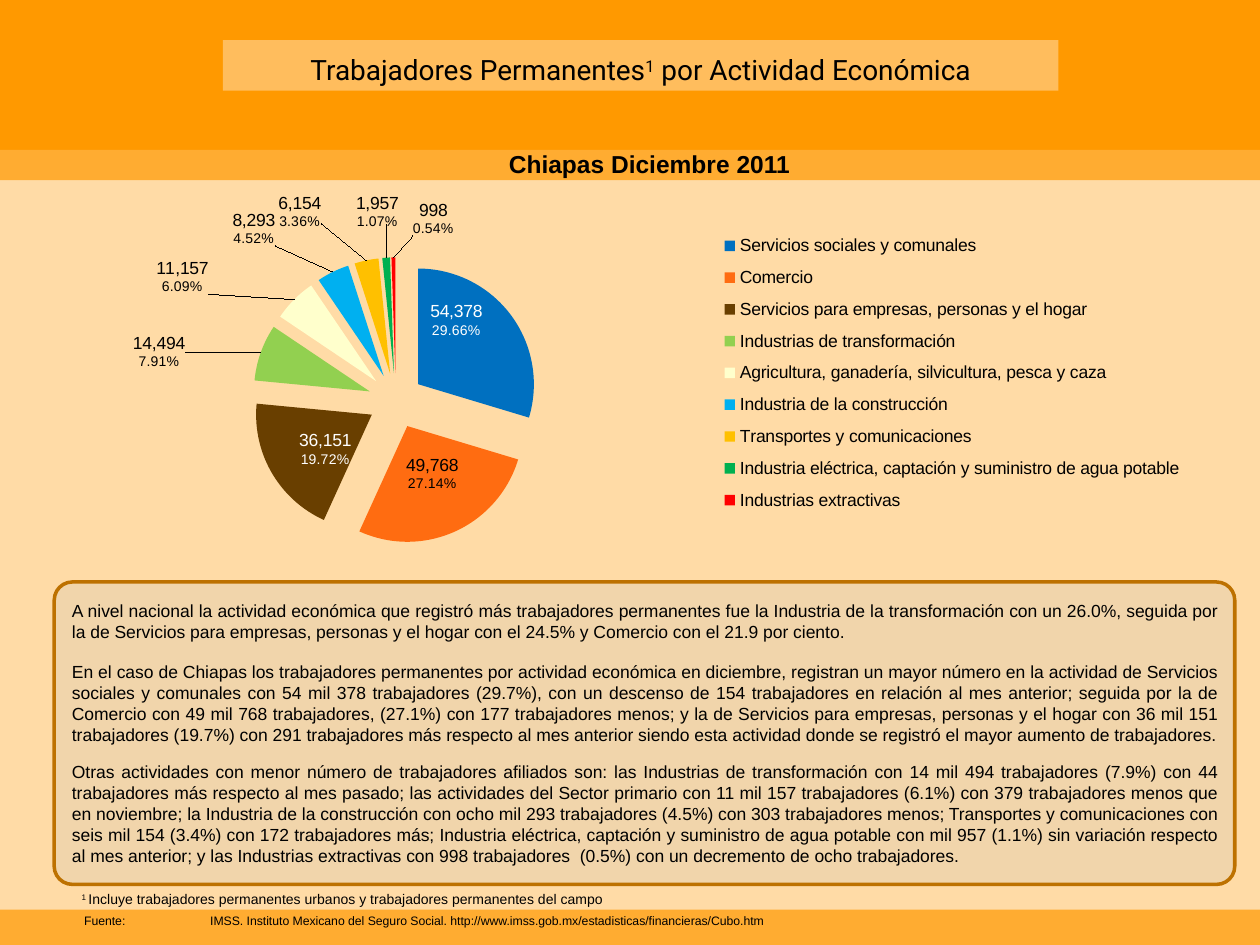
from lxml.etree import SubElement
from pptx import Presentation
from pptx.chart.data import CategoryChartData
from pptx.dml.color import RGBColor
from pptx.enum.chart import XL_CHART_TYPE, XL_LABEL_POSITION, XL_LEGEND_POSITION
from pptx.enum.shapes import MSO_SHAPE
from pptx.enum.text import MSO_ANCHOR, PP_ALIGN
from pptx.oxml import parse_xml
from pptx.oxml.ns import nsdecls, qn
from pptx.util import Pt

BLACK = RGBColor(0, 0, 0)
WHITE = RGBColor(255, 255, 255)
ORANGE = RGBColor(0xFF, 0x99, 0x00)
AMBER = RGBColor(0xFF, 0xAC, 0x31)
PEACH = RGBColor(0xFF, 0xDB, 0xA6)
APRICOT = RGBColor(0xFF, 0xBD, 0x5D)
SAND = RGBColor(0xF1, 0xD5, 0xAB)
BROWN = RGBColor(0xBD, 0x71, 0x00)


def add_box(kind, area, fill):
    box = slide.shapes.add_shape(kind, *map(Pt, area))
    box.shadow.inherit = False
    box.fill.solid()
    box.fill.fore_color.rgb = fill
    box.line.fill.background()
    return box


def add_run(para, text, size, color=BLACK, face="Arial", bold=False, raised=False):
    run = para.add_run()
    run.text = text
    form = {"size": Pt(size), "name": face, "bold": bold}
    for key, value in form.items():
        setattr(run.font, key, value)
    run.font.color.rgb = color
    if raised:
        run._r.get_or_add_rPr().set("baseline", "30000")


deck = Presentation()
deck.slide_width, deck.slide_height = Pt(720), Pt(540)
slide = deck.slides.add_slide(deck.slide_layouts[6])
slide.background.fill.solid()
slide.background.fill.fore_color.rgb = PEACH

# Bands across the slide: top, height, colour
for top, height, color in [(0, 94.3, ORANGE), (496.8, 21.6, PEACH),
                           (85.7, 17.3, AMBER), (519.8, 20.2, AMBER)]:
    add_box(MSO_SHAPE.RECTANGLE, (0, top, 720, height), color)

# Commentary panel: space before, text
NOTES = [
    (0, "A nivel nacional la actividad económica que registró más trabajadores permanentes fue la "
        "Industria de la transformación con un 26.0%, seguida por la de Servicios para empresas, "
        "personas y el hogar con el 24.5% y Comercio con el 21.9 por ciento. "),
    (10.5, "En el caso de Chiapas los trabajadores permanentes por actividad económica en diciembre, "
           "registran un mayor número en la actividad de Servicios sociales y comunales con 54 mil 378 "
           "trabajadores (29.7%), con un descenso de 154 trabajadores en relación al mes anterior; "
           "seguida por la de Comercio con 49 mil 768 trabajadores, (27.1%) con 177 trabajadores menos; "
           "y la de Servicios para empresas, personas y el hogar con 36 mil 151 trabajadores (19.7%) con "
           "291 trabajadores más respecto al mes anterior siendo esta actividad donde se registró el "
           "mayor aumento de trabajadores."),
    (9, "Otras actividades con menor número de trabajadores afiliados son: las Industrias de "
        "transformación con 14 mil 494 trabajadores (7.9%) con 44 trabajadores más respecto al mes "
        "pasado; las actividades del Sector primario con 11 mil 157 trabajadores (6.1%) con 379 "
        "trabajadores menos que en noviembre; la Industria de la construcción con ocho mil 293 "
        "trabajadores (4.5%) con 303 trabajadores menos; Transportes y comunicaciones con seis mil 154 "
        "(3.4%) con 172 trabajadores más; Industria eléctrica, captación y suministro de agua potable "
        "con mil 957 (1.1%) sin variación respecto al mes anterior; y las Industrias extractivas con "
        "998 trabajadores  (0.5%) con un decremento de ocho trabajadores."),
]
panel = add_box(MSO_SHAPE.ROUNDED_RECTANGLE, (31, 332.6, 674.6, 172.8), SAND)
panel.adjustments[0] = 0.06
panel.line.color.rgb = BROWN
panel.line.width = Pt(2)
frame = panel.text_frame
frame.word_wrap = True
frame.vertical_anchor = MSO_ANCHOR.MIDDLE
for i, (gap, text) in enumerate(NOTES):
    para = frame.add_paragraph() if i else frame.paragraphs[0]
    para.alignment = PP_ALIGN.JUSTIFY
    para.space_before = Pt(gap)
    add_run(para, text, 10)

# Title
title = add_box(MSO_SHAPE.RECTANGLE, (127.4, 23, 477.4, 28.8), APRICOT)
frame = title.text_frame
frame.word_wrap = True
frame.vertical_anchor = MSO_ANCHOR.TOP
frame.margin_top = Pt(7)
para = frame.paragraphs[0]
para.alignment = PP_ALIGN.CENTER
for text, raised in [("Trabajadores Permanentes", False), ("1", True),
                     (" por Actividad Económica", False)]:
    add_run(para, text, 16, face="Roboto", raised=raised)

# Subtitle, source and footnote: area, size, bold, runs
LINES = [
    ((283.7, 81.4, 175.7, 24.5), 14, True, [("Chiapas Diciembre 2011", False)]),
    ((41, 518.4, 414, 15.8), 7, False,
     [("Fuente:\tIMSS. Instituto Mexicano del Seguro Social. "
       "http://www.imss.gob.mx/estadisticas/financieras/Cubo.htm", False)]),
    ((39.6, 505.4, 314.6, 17.3), 8, False,
     [("1 ", True),
      ("Incluye trabajadores permanentes urbanos y trabajadores permanentes del campo", False)]),
]
for area, size, bold, runs in LINES:
    frame = slide.shapes.add_textbox(*map(Pt, area)).text_frame
    frame.word_wrap = False
    para = frame.paragraphs[0]
    if "\t" in runs[0][0]:
        tabs = SubElement(para._p.get_or_add_pPr(), qn("a:tabLst"))
        SubElement(tabs, qn("a:tab"), pos=str(Pt(72)), algn="l")
    for text, raised in runs:
        add_run(para, text, size, bold=bold, raised=raised)

# Pie slices: name, value, share, colour, label colour, label shift in points
SLICES = [
    ("Servicios sociales y comunales", 54378, "29.66%", "0070C0", WHITE, (-5, -17)),
    ("Comercio", 49768, "27.14%", "FF6C11", BLACK, (1, -3)),
    ("Servicios para empresas, personas y el hogar", 36151, "19.72%", "693F00", WHITE, (2, 3)),
    ("Industrias de transformación", 14494, "7.91%", "92D050", BLACK, (-39, 11)),
    ("Agricultura, ganadería, silvicultura, pesca y caza", 11157, "6.09%", "FFFFCC", BLACK, (-46, 0)),
    ("Industria de la construcción", 8293, "4.52%", "00B0F0", BLACK, (-31, -11)),
    ("Transportes y comunicaciones", 6154, "3.36%", "FFC000", BLACK, (-25, -17)),
    ("Industria eléctrica, captación y suministro de agua potable", 1957, "1.07%", "00B050", BLACK,
     (-5, -15)),
    ("Industrias extractivas", 998, "0.54%", "FF0000", BLACK, (23, -8)),
]
WIDE, HIGH = 676, 213
data = CategoryChartData()
data.categories = [part[0] for part in SLICES]
data.add_series("Series 1", [part[1] for part in SLICES])
chart = slide.shapes.add_chart(XL_CHART_TYPE.PIE, Pt(30.2), Pt(110.9), Pt(WIDE), Pt(HIGH), data).chart
chart.has_title = False
chart.font.size, chart.font.name = Pt(10), "Arial"
chart.font.color.rgb = BLACK
chart.has_legend = True
legend = chart.legend
legend.position = XL_LEGEND_POSITION.RIGHT
legend.include_in_layout = False
legend.font.size = Pt(10)

plot = chart.plots[0]
plot.vary_by_categories = True
pie = plot.series[0]
burst = parse_xml(f'<c:explosion {nsdecls("c")} val="24"/>')
pie._element.find(qn("c:tx")).addnext(burst)
pie.data_labels.show_value = True
pie.data_labels.show_percentage = True
for i, (name, value, share, color, ink, shift) in enumerate(SLICES):
    point = pie.points[i]
    point.format.fill.solid()
    point.format.fill.fore_color.rgb = RGBColor.from_string(color)
    label = point.data_label
    frame = label.text_frame
    add_run(frame.paragraphs[0], f"{value:,}", 10, ink)
    add_run(frame.add_paragraph(), share, 8, ink)
    label.position = XL_LABEL_POSITION.CENTER if i < 3 else XL_LABEL_POSITION.OUTSIDE_END
    spot = parse_xml(f'<c:layout {nsdecls("c")}><c:manualLayout><c:x val="{shift[0] / WIDE:.3f}"/>'
                     f'<c:y val="{shift[1] / HIGH:.3f}"/></c:manualLayout></c:layout>')
    label._get_or_add_dLbl().find(qn("c:idx")).addnext(spot)

# Places of the plot and the legend inside the chart
area = plot._element.getparent()
for old in area.findall(qn("c:layout")):
    area.remove(old)
for home, rank, goal, (x, y, w, h) in [
        (area, 0, '<c:layoutTarget val="inner"/>', (0, 0.17, 0.58, 0.77)),
        (legend._element, 1, "", (0.56, 0.08, 0.4, 0.8))]:
    home.insert(rank, parse_xml(
        f'<c:layout {nsdecls("c")}><c:manualLayout>{goal}<c:xMode val="edge"/><c:yMode val="edge"/>'
        f'<c:x val="{x}"/><c:y val="{y}"/><c:w val="{w}"/><c:h val="{h}"/></c:manualLayout></c:layout>'))

deck.save("out.pptx")
